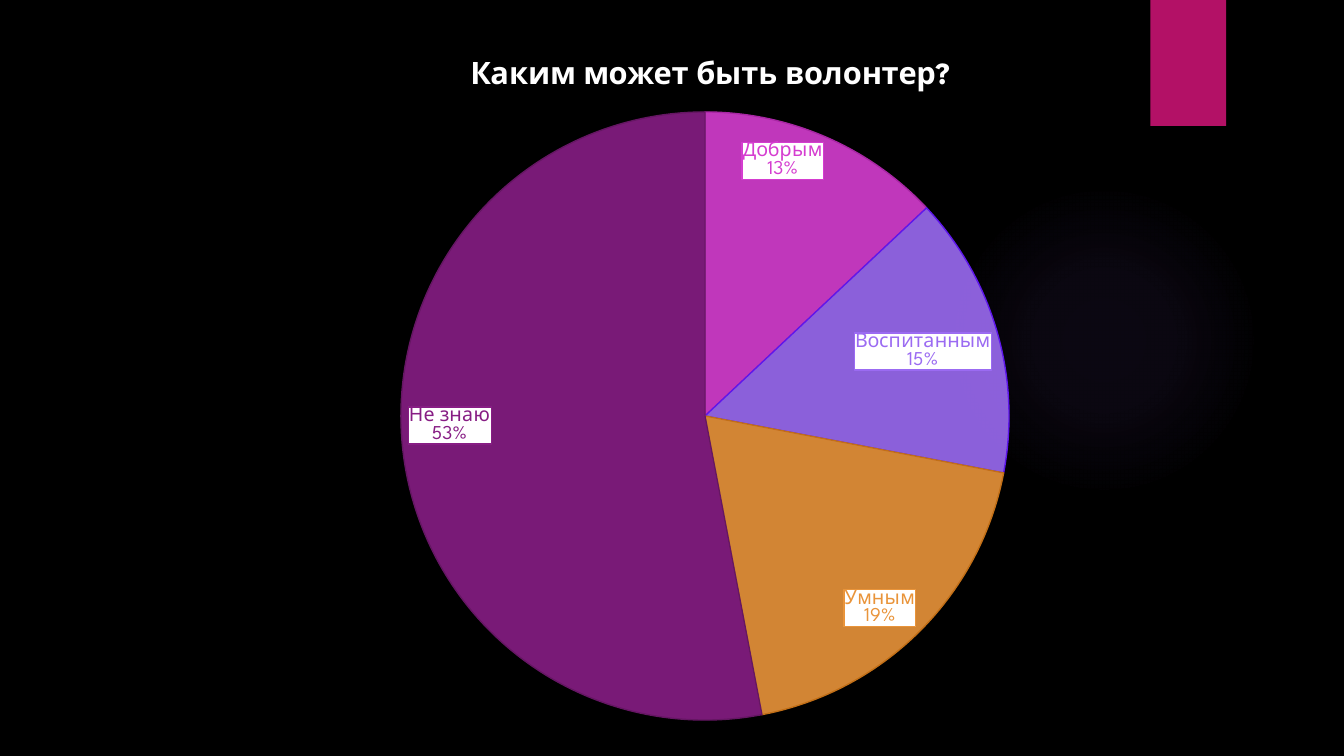
import pptx
import pptx.chart.data
import pptx.dml.color
import pptx.enum.chart
import pptx.enum.shapes
import pptx.oxml
import pptx.oxml.ns
import pptx.util
from lxml import etree

Pt = pptx.util.Pt
FONT = "League Spartan"
TITLE = "Каким может быть волонтер?"
SLICES = [
    ("Добрым", 13, "D53DD0", "A826A4"),
    ("Воспитанным", 15, "9B6BF2", "5E17EB"),
    ("Умным", 19, "E9943A", "C26F17"),
    ("Не знаю", 53, "871D84", "651663"),
]
GLOW = ("9B6BF2", [(0, 7), (36, 6), (69, 0)])
CHART_BOX = (66, 24.5, 875, 499.5)
PIE_BOX = (286.4, 80, 434.4, 434.4)
TITLE_AT = (332, 39)
NS = 'xmlns:a="http://schemas.openxmlformats.org/drawingml/2006/main" ' \
     'xmlns:c="http://schemas.openxmlformats.org/drawingml/2006/chart"'
qn = pptx.oxml.ns.qn


def color(value):
    return pptx.dml.color.RGBColor.from_string(value)


def paint(fill, value):
    fill.solid()
    fill.fore_color.rgb = color(value)


def add_shape(slide, kind, box, value):
    sp = slide.shapes.add_shape(kind, *map(Pt, box))
    sp.shadow.inherit = False
    sp.line.fill.background()
    paint(sp.fill, value)
    return sp


def add_glow(slide, box):
    value, stops = GLOW
    sp = add_shape(slide, pptx.enum.shapes.MSO_SHAPE.OVAL, box, value)
    marks = "".join(
        f'<a:gs pos="{pos * 1000}"><a:srgbClr val="{value}">'
        f'<a:alpha val="{alpha * 1000}"/></a:srgbClr></a:gs>' for pos, alpha in stops)
    solid = sp.element.spPr.find(qn("a:solidFill"))
    sp.element.spPr.replace(solid, pptx.oxml.parse_xml(
        f'<a:gradFill {NS}><a:gsLst>{marks}</a:gsLst><a:path path="circle">'
        '<a:fillToRect l="50000" t="50000" r="50000" b="50000"/></a:path></a:gradFill>'))


def layout(box, target=""):
    left, top, width, height = CHART_BOX
    parts = [("x", (box[0] - left) / width), ("y", (box[1] - top) / height)]
    if len(box) == 4:
        parts += [("w", box[2] / width), ("h", box[3] / height)]
    modes = '<c:xMode val="edge"/><c:yMode val="edge"/>'
    values = "".join(f'<c:{name} val="{value:.4f}"/>' for name, value in parts)
    return pptx.oxml.parse_xml(
        f"<c:layout {NS}><c:manualLayout>{target}{modes}{values}</c:manualLayout></c:layout>")


def place(parent, new, after=None):
    for old in parent.findall(qn("c:layout")):
        parent.remove(old)
    if after is None:
        parent.insert(0, new)
    else:
        parent.find(qn(after)).addnext(new)


def style_label(point, dl, value):
    dl.font.size = Pt(14)
    dl.font.name = FONT
    dl.font.color.rgb = color(value)
    dl.position = pptx.enum.chart.XL_LABEL_POSITION.INSIDE_END
    label = point.getparent().find(qn("c:dLbls")).findall(qn("c:dLbl"))[-1]
    label.find(qn("c:txPr")).addprevious(pptx.oxml.parse_xml(
        f'<c:spPr {NS}><a:solidFill><a:srgbClr val="FFFFFF"/></a:solidFill>'
        f'<a:ln w="12700"><a:solidFill><a:srgbClr val="{value}"/></a:solidFill></a:ln></c:spPr>'))
    for name, shown in (("showVal", "0"), ("showCatName", "1"), ("showPercent", "1")):
        label.find(qn("c:" + name)).set("val", shown)
    etree.SubElement(label, qn("c:separator")).text = "\n"


def add_pie(slide):
    data = pptx.chart.data.CategoryChartData()
    data.categories = [s[0] for s in SLICES]
    data.add_series("Series 1", [s[1] for s in SLICES])
    chart = slide.shapes.add_chart(
        pptx.enum.chart.XL_CHART_TYPE.PIE, *map(Pt, CHART_BOX), data).chart
    chart.has_legend = False
    chart.font.name = FONT
    chart.font.size = Pt(10)
    chart.font.color.rgb = color("FFFFFF")
    chart.has_title = True
    tf = chart.chart_title.text_frame
    tf.text = TITLE
    font = tf.paragraphs[0].runs[0].font
    font.name, font.size, font.bold = FONT, Pt(22), True
    font.color.rgb = color("FFFFFF")
    root = chart.element if hasattr(chart, "element") else chart._chartSpace
    place(root.find(".//" + qn("c:title")), layout(TITLE_AT), "c:tx")
    place(root.find(".//" + qn("c:plotArea")),
          layout(PIE_BOX, '<c:layoutTarget val="inner"/>'))
    plot = chart.plots[0]
    plot.vary_by_categories = True
    series = plot.series[0]
    for i, (name, value, fill, edge) in enumerate(SLICES):
        point = series.points[i]
        paint(point.format.fill, fill)
        point.format.line.color.rgb = color(edge)
        point.format.line.width = Pt(1)
        dpt = root.findall(".//" + qn("c:dPt"))[i]
        clr = dpt.find(qn("c:spPr")).find(qn("a:solidFill"))[0]
        etree.SubElement(clr, qn("a:alpha")).set("val", "90000")
        style_label(dpt, point.data_label, fill)


def main():
    prs = pptx.Presentation()
    prs.slide_width, prs.slide_height = Pt(960), Pt(540)
    slide = prs.slides.add_slide(prs.slide_layouts[6])
    paint(slide.background.fill, "000000")
    add_glow(slide, (677.5, 131.8, 221.8, 221.8))
    add_shape(slide, pptx.enum.shapes.MSO_SHAPE.RECTANGLE, (821.8, 0, 54, 90), "B31166")
    add_pie(slide)
    prs.save("out.pptx")


if __name__ == "__main__":
    main()
